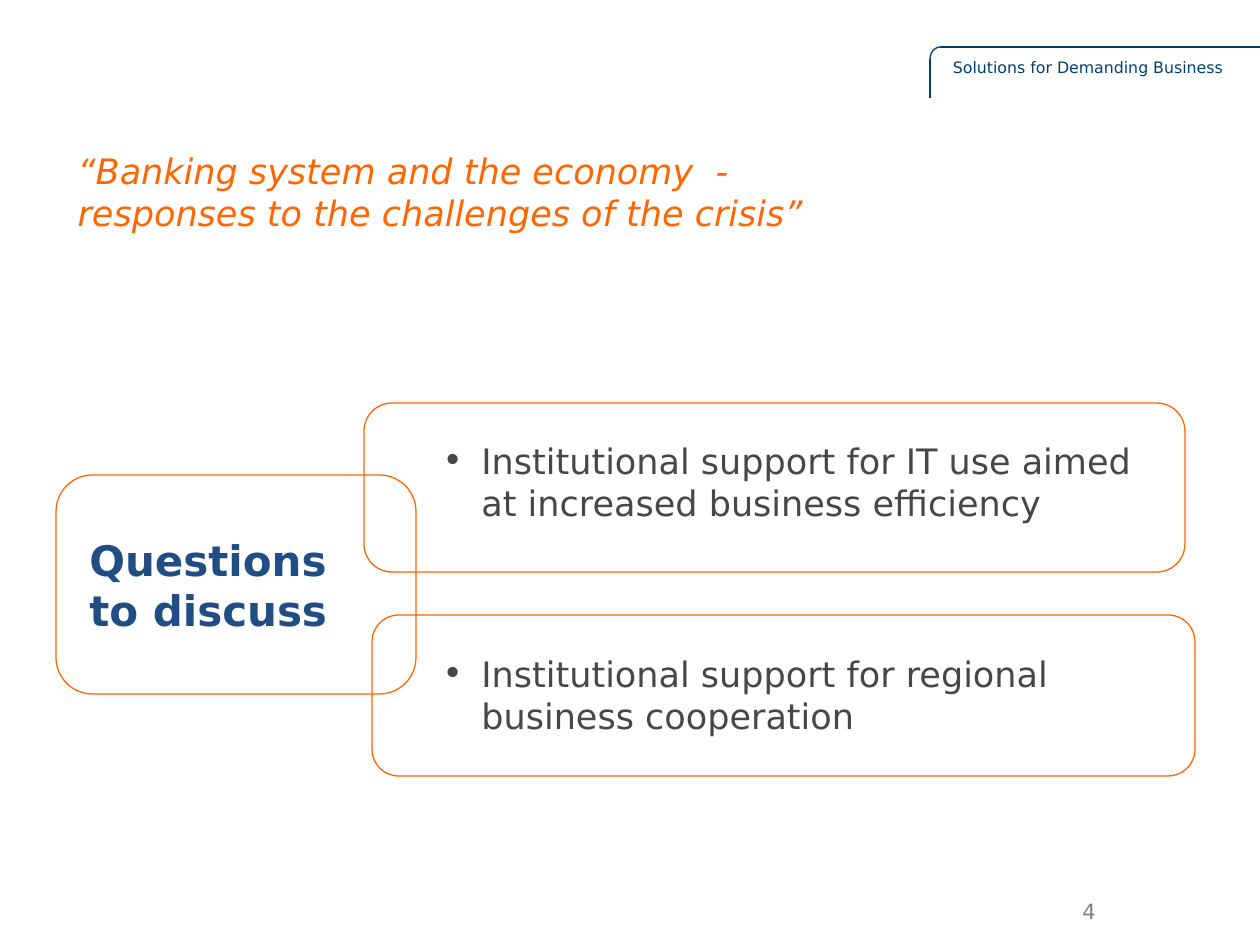
from dataclasses import dataclass

from lxml.etree import SubElement
from pptx import Presentation
from pptx.dml.color import RGBColor
from pptx.enum.shapes import MSO_CONNECTOR, MSO_SHAPE
from pptx.enum.text import MSO_ANCHOR, MSO_AUTO_SIZE, PP_ALIGN
from pptx.oxml.ns import qn
from pptx.util import Emu, Pt

PX_PER_INCH = 126
BULLET_INDENT = 39


@dataclass(frozen=True)
class Theme:
    font: str = "DejaVu Sans"
    orange: str = "FF6600"
    navy: str = "004071"
    blue: str = "204D84"
    ink: str = "464847"
    gray: str = "808080"
    heading: int = 24
    body: int = 20
    number: int = 12
    tagline: int = 9
    line: float = 0.75


@dataclass(frozen=True)
class Box:
    left: int
    top: int
    width: int
    height: int


@dataclass(frozen=True)
class TextStyle:
    size: int
    color: str
    bold: bool = False
    italic: bool = False
    align: PP_ALIGN = PP_ALIGN.LEFT
    bullet: bool = False


@dataclass(frozen=True)
class Card:
    frame: Box
    text_box: Box
    text: str
    style: TextStyle


THEME = Theme()
HEADING = TextStyle(THEME.heading, THEME.blue, bold=True)
QUESTION = TextStyle(THEME.body, THEME.ink, bullet=True)
TITLE = TextStyle(THEME.body, THEME.orange, italic=True)
TAGLINE = TextStyle(THEME.tagline, THEME.navy, align=PP_ALIGN.RIGHT)
NUMBER = TextStyle(THEME.number, THEME.gray)

CARDS = (
    Card(Box(56, 475, 360, 219), Box(77, 528, 326, 115),
         "Questions\nto discuss", HEADING),
    Card(Box(364, 403, 821, 169), Box(430, 433, 747, 97),
         "Institutional support for IT use aimed at increased business efficiency", QUESTION),
    Card(Box(372, 615, 823, 161), Box(430, 646, 761, 131),
         "Institutional support for regional business cooperation", QUESTION),
)


def px(length: int) -> Emu:
    """Turn pixels into EMU."""
    return Emu(round(length * 914400 / PX_PER_INCH))


def place(box: Box) -> tuple[Emu, Emu, Emu, Emu]:
    """Give the position and size of a box in EMU."""
    return px(box.left), px(box.top), px(box.width), px(box.height)


def add_bullet(paragraph) -> None:
    """Give a paragraph a round bullet with a hanging indent."""
    properties = paragraph._p.get_or_add_pPr()
    properties.set("marL", str(px(BULLET_INDENT)))
    properties.set("indent", str(-px(BULLET_INDENT)))
    SubElement(properties, qn("a:buFont"), typeface=THEME.font)
    SubElement(properties, qn("a:buChar"), char="•")


def write(shape, text: str, style: TextStyle) -> None:
    """Fill a shape with text in the given style."""
    frame = shape.text_frame
    frame.text = text
    frame.word_wrap = True
    frame.auto_size = MSO_AUTO_SIZE.NONE
    frame.vertical_anchor = MSO_ANCHOR.TOP
    for paragraph in frame.paragraphs:
        paragraph.alignment = style.align
        paragraph.space_before = Pt(0)
        if style.bullet:
            add_bullet(paragraph)
        for run in paragraph.runs:
            run.font.name = THEME.font
            run.font.size = Pt(style.size)
            run.font.bold = style.bold
            run.font.italic = style.italic
            run.font.color.rgb = RGBColor.from_string(style.color)


def add_text(slide, box: Box, text: str, style: TextStyle) -> None:
    """Add a text box."""
    write(slide.shapes.add_textbox(*place(box)), text, style)


def set_line(shape, color: str) -> None:
    """Give a shape or connector the thin line of the theme."""
    shape.line.color.rgb = RGBColor.from_string(color)
    shape.line.width = Pt(THEME.line)


def add_outline(slide, kind: MSO_SHAPE, box: Box, color: str):
    """Add an unfilled preset shape."""
    shape = slide.shapes.add_shape(kind, *place(box))
    shape.shadow.inherit = False
    shape.fill.background()
    set_line(shape, color)
    return shape


def add_rule(slide, start: tuple[int, int], end: tuple[int, int]) -> None:
    """Add a straight line of the header tab."""
    connector = slide.shapes.add_connector(
        MSO_CONNECTOR.STRAIGHT, *map(px, start), *map(px, end))
    set_line(connector, THEME.navy)
    SubElement(connector._element.spPr, qn("a:effectLst"))


def add_header(slide) -> None:
    """Draw the header tab and its tagline."""
    corner = add_outline(slide, MSO_SHAPE.ARC, Box(930, 47, 21, 24), THEME.navy)
    corner.adjustments[0] = 108
    corner.adjustments[1] = 162
    add_rule(slide, (940, 47), (1260, 47))
    add_rule(slide, (930, 59), (930, 98))
    add_text(slide, Box(862, 52, 373, 50), "Solutions for Demanding Business", TAGLINE)


def add_title(slide) -> None:
    """Place and fill the title placeholder."""
    title = slide.shapes.title
    title.left, title.top, title.width, title.height = place(Box(65, 143, 906, 97))
    write(title, "“Banking system and the economy  -\nresponses to the challenges of the crisis”", TITLE)


def add_card(slide, card: Card) -> None:
    """Draw a rounded card and its text."""
    add_outline(slide, MSO_SHAPE.ROUNDED_RECTANGLE, card.frame, THEME.orange)
    add_text(slide, card.text_box, card.text, card.style)


def main() -> None:
    """Build and save the slide."""
    presentation = Presentation()
    presentation.slide_width = px(1260)
    presentation.slide_height = px(945)
    slide = presentation.slides.add_slide(presentation.slide_layouts[5])
    add_title(slide)
    add_header(slide)
    for card in CARDS:
        add_card(slide, card)
    add_text(slide, Box(1070, 892, 63, 38), "4", NUMBER)
    presentation.save("out.pptx")


if __name__ == "__main__":
    main()
